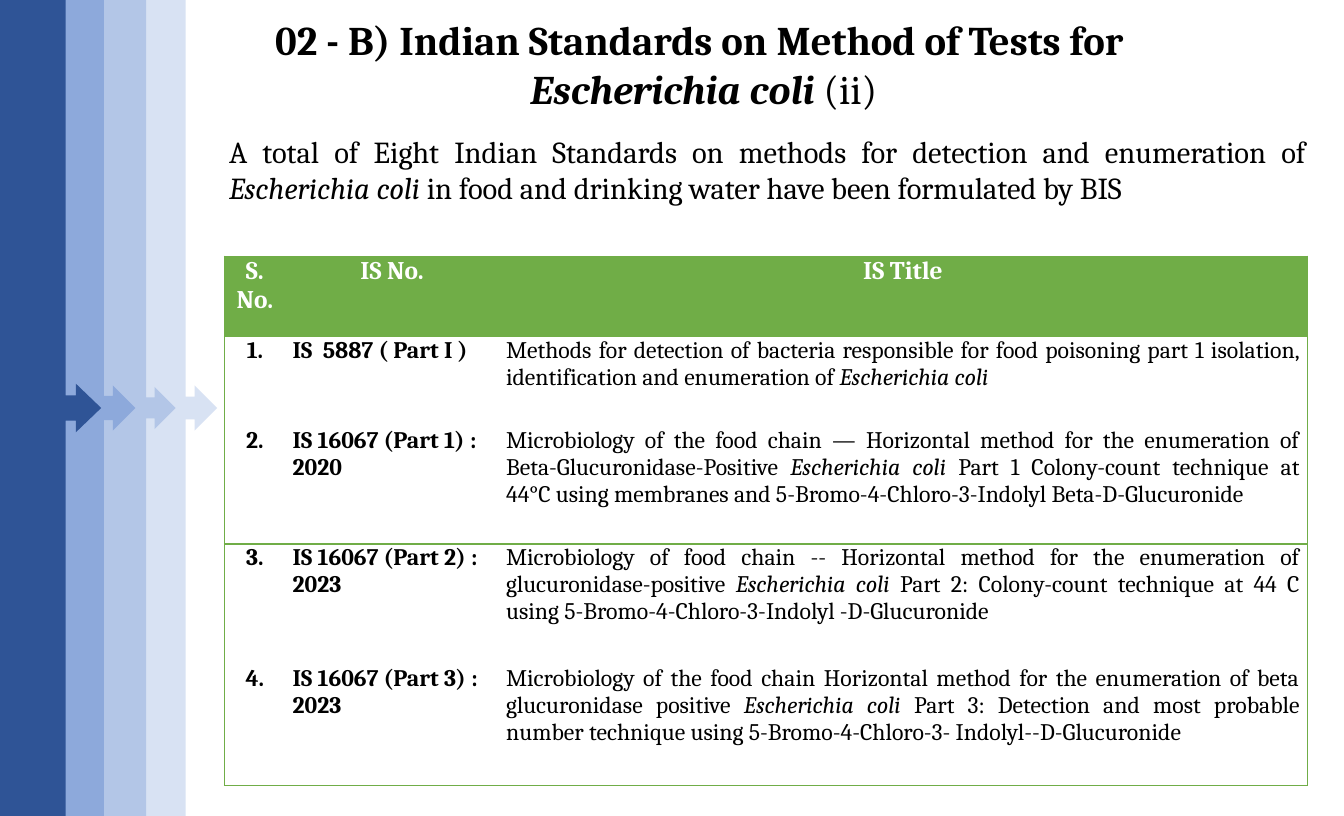
from lxml.etree import SubElement
from pptx import Presentation
from pptx.dml.color import RGBColor as RGB
from pptx.enum.shapes import MSO_SHAPE as SHAPE
from pptx.enum.text import MSO_ANCHOR as ANCHOR, MSO_AUTO_SIZE as FIT, PP_ALIGN as ALIGN
from pptx.oxml.ns import qn
from pptx.util import Inches, Pt

GREEN = RGB(0x70, 0xAD, 0x47)
WHITE = RGB(0xFF, 0xFF, 0xFF)
BLACK = RGB(0, 0, 0)
BLUES = [RGB(0xD8, 0xE2, 0xF3), RGB(0xB3, 0xC6, 0xE7),
         RGB(0x8D, 0xA9, 0xDB), RGB(0x2F, 0x54, 0x96)]
GENUS = "Escherichia coli"

deck = Presentation()
deck.slide_width, deck.slide_height = Inches(11.02), Inches(6.69)
wide, high = deck.slide_width / 100, deck.slide_height / 100
slide = deck.slides.add_slide(deck.slide_layouts[5])


def box(x, y, w, h):
    """Turn shares of the slide, in percent, into left, top, width, height."""
    return [int(x * wide), int(y * high), int(w * wide), int(h * high)]


def write(para, text, align, **look):
    """Fill a paragraph, setting the species name in italics."""
    para.alignment = align
    before, name, after = text.partition(GENUS)
    for part in filter(None, (before, name, after)):
        run = para.add_run()
        run.text = part
        look["italic"] = part == GENUS
        for key, value in {"name": "Cambria", **look}.items():
            if key == "color":
                run.font.color.rgb = value
            else:
                setattr(run.font, key, value)


# Side bands: left, width, stem thickness, head half-width
bands = [(9.44, 6.72, 0.25, 0.25), (6.81, 6.26, 0.25, 0.25),
         (3.36, 6.72, 0.27, 0.25), (0, 7.53, 0.25, 0.24)]
for (left, width, stem, head), blue in zip(bands, BLUES):
    band = slide.shapes.add_shape(SHAPE.RIGHT_ARROW_CALLOUT, *box(left, 0, width, 100))
    for i, value in enumerate((stem, head, 0.25, 0.65)):
        band.adjustments[i] = value
    band.fill.solid()
    band.fill.fore_color.rgb = blue
    band.line.fill.background()
    band.shadow.inherit = False

# Title
title = slide.shapes.title
title.left, title.top, title.width, title.height = box(14.25, 1.05, 76.23, 13.6)
frame = title.text_frame
frame.auto_size, frame.vertical_anchor = FIT.NONE, ANCHOR.TOP
look = {"size": Pt(24), "color": BLACK}
write(frame.paragraphs[0], "02 - B) Indian Standards on Method of Tests for ",
      ALIGN.CENTER, bold=True, **look)
second = frame.add_paragraph()
write(second, GENUS, ALIGN.CENTER, bold=True, **look)
write(second, " (ii)", ALIGN.CENTER, bold=False, **look)

# Table
heads = ("S. No.", "IS No.", "IS Title")
rows = [
    heads,
    ("1.", "IS  5887 ( Part I )",
     "Methods for detection of bacteria responsible for food poisoning part 1 isolation, "
     "identification and enumeration of Escherichia coli"),
    ("2.", "IS 16067 (Part 1) : 2020",
     "Microbiology of the food chain — Horizontal method for the enumeration of "
     "Beta-Glucuronidase-Positive Escherichia coli Part 1 Colony-count technique at 44°C "
     "using membranes and 5-Bromo-4-Chloro-3-Indolyl Beta-D-Glucuronide"),
    ("3.", "IS 16067 (Part 2) : 2023",
     "Microbiology of food chain -- Horizontal method for the enumeration of "
     "glucuronidase-positive Escherichia coli Part 2: Colony-count technique at 44 C "
     "using 5-Bromo-4-Chloro-3-Indolyl -D-Glucuronide"),
    ("4.", "IS 16067 (Part 3) : 2023",
     "Microbiology of the food chain Horizontal method for the enumeration of beta "
     "glucuronidase positive Escherichia coli Part 3: Detection and most probable number "
     "technique using 5-Bromo-4-Chloro-3- Indolyl--D-Glucuronide"),
]
table = slide.shapes.add_table(len(rows), len(heads), *box(16.7, 31.39, 80.58, 64.88)).table
table.first_row = table.horz_banding = False
for col, share in zip(table.columns, (4.54, 15.88, 60.16)):
    col.width = int(share * wide)
for row, share in zip(table.rows, (9.87, 11.06, 14.35, 14.8, 14.8)):
    row.height = int(share * high)

aligns = (ALIGN.CENTER, ALIGN.LEFT, ALIGN.JUSTIFY)
for r, texts in enumerate(rows):
    top = r == 0
    for c, text in enumerate(texts):
        cell = table.cell(r, c)
        cell.margin_left = cell.margin_right = Inches(0.06)
        cell.margin_top = cell.margin_bottom = 0
        write(cell.text_frame.paragraphs[0], text, ALIGN.CENTER if top else aligns[c],
              bold=top or c < 2, size=Pt(15 if top else 14), color=WHITE if top else BLACK)
        # Rules frame the table, the header and each pair of rows
        edges = {"L": c == 0, "R": c == 2, "T": r in (0, 1, 3), "B": r in (0, 2, 4)}
        for side, drawn in edges.items():
            line = SubElement(cell._tc.get_or_add_tcPr(), qn(f"a:ln{side}"), w=str(Pt(0.75)))
            if drawn:
                fill = SubElement(line, qn("a:solidFill"))
                SubElement(fill, qn("a:srgbClr"), val=str(GREEN))
            else:
                SubElement(line, qn("a:noFill"))
        if top:
            cell.fill.solid()
            cell.fill.fore_color.rgb = GREEN
        else:
            cell.fill.background()

# Introduction
intro = slide.shapes.add_textbox(*box(16.15, 15.55, 81.94, 10.61)).text_frame
intro.word_wrap = True
write(intro.paragraphs[0],
      "A total of Eight Indian Standards on methods for detection and enumeration of "
      "Escherichia coli in food and drinking water have been formulated by BIS",
      ALIGN.JUSTIFY, size=Pt(18), color=BLACK)

deck.save("out.pptx")
